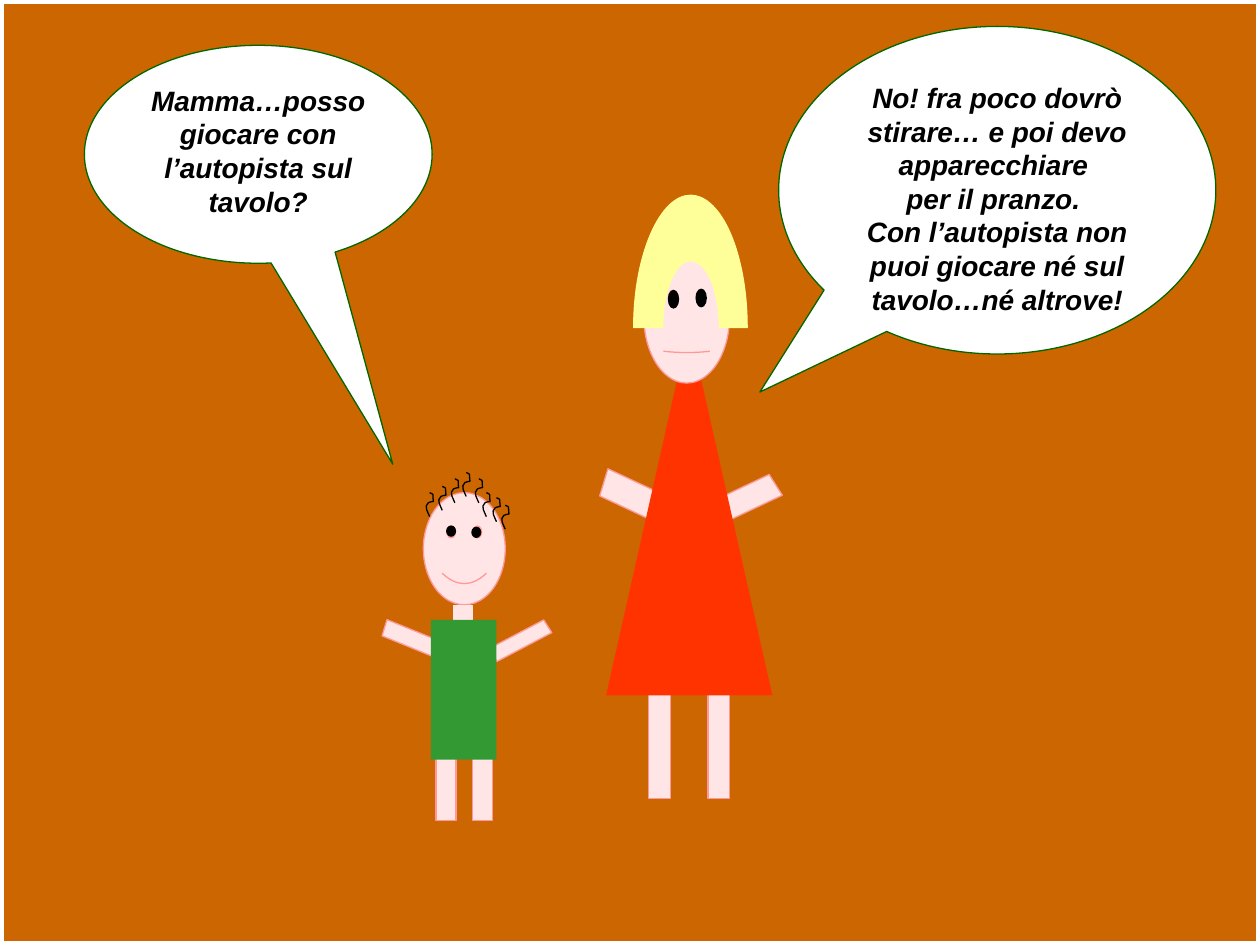
import pptx
import pptx.util
import pptx.dml.color
import pptx.enum.shapes
import pptx.enum.text
import pptx.oxml.ns
import lxml.etree

KIND = pptx.enum.shapes.MSO_SHAPE
COLS, ROWS = 100, 75  # square cells over the whole slide

THEME = {
    "back": "CC6600", "white": "FFFFFF", "ink": "000000", "skin": "FFE5E5",
    "edge": "FF9999", "rim": "006600", "shirt": "339933", "dress": "FF3300",
    "blond": "FFFF99", "thin": 0.75, "frame": 4.5,
}
FONT = {"name": "Arial", "size": pptx.util.Pt(16), "bold": True, "italic": True}

# look: fill, line
LOOKS = {
    "skin": ("skin", "edge"), "neck": ("skin", "skin"), "eye": ("ink", None),
    "shirt": ("shirt", None), "dress": ("dress", None),
    "hair": ("blond", "blond"), "curl": (None, "ink"),
    "talk": ("white", "rim"), "frame": (None, "white"),
}

# part: kind, look, (left, top, width, height) in cells, turn, bend in percent
SON = [
    (KIND.PARALLELOGRAM, "skin", (40.5, 48.4, 1.6, 4.9), 57.6, 25),
    (KIND.PARALLELOGRAM, "skin", (31.9, 48.3, 1.8, 4.9), 106.9, 25),
    (KIND.RECTANGLE, "skin", (34.6, 59.3, 1.6, 5.8), 0, None),
    (KIND.RECTANGLE, "skin", (37.5, 59.3, 1.6, 5.8), 0, None),
    (KIND.SMILEY_FACE, "skin", (33.6, 39.1, 6.5, 8.9), 0, 4.65),
    (KIND.OVAL, "eye", (37.4, 41.8, 0.8, 0.9), 0, None),
    (KIND.OVAL, "eye", (35.4, 41.7, 0.8, 0.9), 0, None),
    (KIND.RECTANGLE, "neck", (36, 48.1, 1.5, 1.1), 0, None),
    (KIND.RECTANGLE, "shirt", (34.2, 49.2, 5.2, 11.1), 0, None),
]
MUM = [
    (KIND.PARALLELOGRAM, "skin", (57.9, 37, 2.6, 5.2), 57.6, 25),
    (KIND.PARALLELOGRAM, "skin", (48.8, 36.8, 3, 5.2), 106.9, 25),
    (KIND.RECTANGLE, "skin", (51.5, 53.7, 1.7, 9.7), 0, None),
    (KIND.RECTANGLE, "skin", (56.2, 53.7, 1.7, 9.7), 0, None),
    (KIND.ISOSCELES_TRIANGLE, "dress", (48.1, 25.9, 13.2, 29.3), 0, 50),
    (KIND.SMILEY_FACE, "skin", (51.1, 19.9, 6.8, 10.5), 0, 0.5),
    (KIND.OVAL, "eye", (55.2, 22.9, 0.9, 1.5), 0, None),
    (KIND.OVAL, "eye", (53, 23, 0.9, 1.5), 0, None),
]

# outlines: a start point, then C takes three points and L takes one
CURLS = [(33.6, 39.1), (34.6, 38.6), (37.5, 38), (38.1, 39.1),
         (36.5, 37.5), (39.6, 40.1), (38.9, 39.5), (35.6, 38)]
CURL = ("CCC", [
    (0.5, 1.9), (0.4, 1.6), (0, 1.1), (0.4, 0.8), (0.5, 0.7),
    (0.7, 0.75), (0.8, 0.7), (0.7, 0), (0.9, 0.2), (0.5, 0)])
HAIR = ("CCLCCL", [
    (52.6, 26), (52.6, 23.1), (53.6, 20.7), (54.8, 20.7),
    (56.1, 20.7), (57.1, 23.1), (57.1, 26), (59.3, 26),
    (59.3, 20.2), (57.3, 15.5), (54.8, 15.5),
    (52.4, 15.5), (50.3, 20.2), (50.3, 26), (52.6, 26)])

# bubble: box, tip of the tail, lines
TALK = [
    ((6.7, 3.6, 27.6, 17.3), (31.18, 36.85),
     ["Mamma…posso giocare con l’autopista sul tavolo?"]),
    ((61.8, 2.1, 34.7, 26), (60.31, 31.12),
     ["No! fra poco dovrò stirare… e poi devo apparecchiare ",
      "per il pranzo. ",
      "Con l’autopista non puoi giocare né sul tavolo…né altrove!"]),
]

deck = pptx.Presentation()
deck.slide_width = pptx.util.Inches(10)
deck.slide_height = pptx.util.Inches(7.5)
CELL = deck.slide_width / COLS


def emu(cells):
    return [round(n * CELL) for n in cells]


def color(name):
    return pptx.dml.color.RGBColor.from_string(THEME[name])


def paint(shape, look, width=THEME["thin"]):
    shape.shadow.inherit = False
    for part, name in zip((shape.fill, shape.line.fill), LOOKS[look]):
        if name:
            part.solid()
            part.fore_color.rgb = color(name)
        else:
            part.background()
    if LOOKS[look][1]:
        shape.line.width = pptx.util.Pt(width)


def draw(shapes, parts):
    for kind, look, box, turn, bend in parts:
        shape = shapes.add_shape(kind, *emu(box))
        shape.rotation = turn
        if bend is not None:
            shape.adjustments[0] = bend / 100
        paint(shape, look)


def trace(shapes, steps, points, look, close):
    """Draw a freeform, turning each run of three points under C into a curve."""
    dots = [emu(p) for p in points]
    pen = shapes.build_freeform(*dots[0], scale=1.0)
    pen.add_line_segments(dots[1:], close=close)
    shape = pen.convert_to_shape()
    name = pptx.oxml.ns.qn
    lines = iter(list(shape.element.iter(name("a:lnTo"))))
    for step in steps:
        first = next(lines)
        if step == "C":
            curve = lxml.etree.Element(name("a:cubicBezTo"))
            first.addprevious(curve)
            for line in (first, next(lines), next(lines)):
                curve.append(line[0])
                line.getparent().remove(line)
    paint(shape, look)


def speak(shapes, box, tip, lines):
    shape = shapes.add_shape(KIND.OVAL_CALLOUT, *emu(box))
    for i in (0, 1):
        shape.adjustments[i] = (tip[i] - box[i]) / box[i + 2] - 0.5
    paint(shape, "talk")
    frame = shape.text_frame
    frame.word_wrap = True
    frame.vertical_anchor = pptx.enum.text.MSO_ANCHOR.TOP
    for i, line in enumerate(lines):
        para = frame.add_paragraph() if i else frame.paragraphs[0]
        para.alignment = pptx.enum.text.PP_ALIGN.CENTER
        run = para.add_run()
        run.text = line
        for key, value in FONT.items():
            setattr(run.font, key, value)
        run.font.color.rgb = color("ink")


def main():
    slide = deck.slides.add_slide(deck.slide_layouts[6])
    slide.background.fill.solid()
    slide.background.fill.fore_color.rgb = color("back")
    shapes = slide.shapes
    border = shapes.add_shape(KIND.RECTANGLE, *emu((0, 0, COLS, ROWS)))
    paint(border, "frame", THEME["frame"])

    son = shapes.add_group_shape().shapes
    draw(son, SON)
    steps, knots = CURL
    for left, top in CURLS:
        trace(son, steps, [(left + x, top + y) for x, y in knots], "curl", False)

    for bubble in TALK:
        speak(shapes, *bubble)

    mum = shapes.add_group_shape().shapes
    draw(mum, MUM)
    trace(mum, *HAIR, "hair", True)
    deck.save("out.pptx")


if __name__ == "__main__":
    main()
